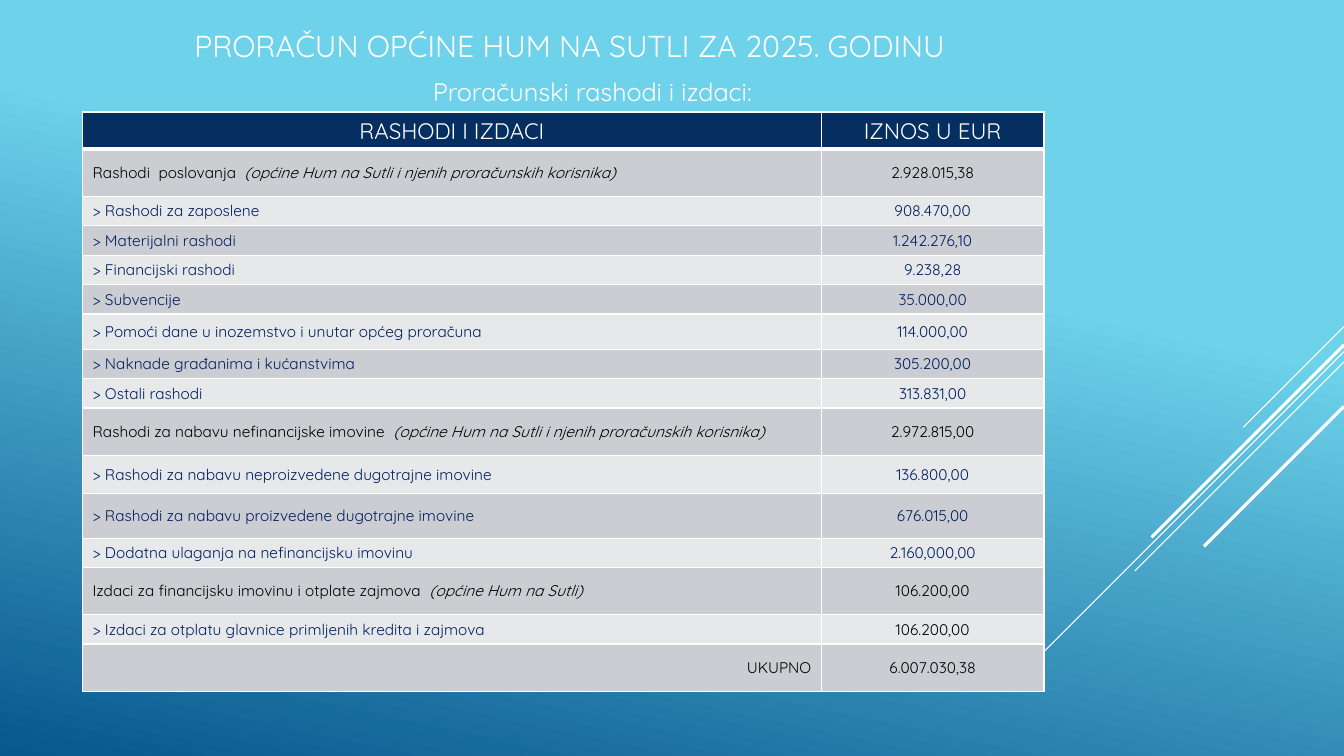
from dataclasses import dataclass

from lxml.etree import SubElement
from pptx import Presentation
from pptx.dml.color import RGBColor
from pptx.enum.shapes import MSO_CONNECTOR as Connector
from pptx.enum.text import MSO_ANCHOR as Anchor, PP_ALIGN as Align
from pptx.oxml.ns import qn
from pptx.util import Cm, Pt


@dataclass(frozen=True)
class Theme:
    font: str = "Quicksand"
    white: str = "FFFFFF"
    black: str = "000000"
    navy: str = "002060"
    header: str = "052F61"
    bands: tuple = ("CCCDD2", "E7E8EA")
    sky: tuple = ((0.35, "6ED2EB"), (1, "06588E"))
    title_size: float = 21.6
    subtitle_size: float = 18
    header_size: float = 16
    body_size: float = 11


@dataclass(frozen=True)
class Box:
    left: float
    top: float
    width: float
    height: float = 0

    def lengths(self):
        return [Cm(n) for n in (self.left, self.top, self.width, self.height)]


@dataclass(frozen=True)
class Entry:
    label: str
    amount: str
    color: str
    height: float
    note: str = ""
    amount_color: str = ""
    align: Align = Align.LEFT


THEME = Theme()
PAGE = Box(0, 0, 33.87, 19.05)


def group(label, amount, note="", align=Align.LEFT):
    return Entry(label, amount, THEME.black, 1.19, note, align=align)


def item(label, amount, height=0.74, amount_color=""):
    return Entry("> " + label, amount, THEME.navy, height, amount_color=amount_color)


USERS = "(općine Hum na Sutli i njenih proračunskih korisnika)"
ENTRIES = [
    group("Rashodi  poslovanja  ", "2.928.015,38", USERS),
    item("Rashodi za zaposlene", "908.470,00"),
    item("Materijalni rashodi", "1.242.276,10"),
    item("Financijski rashodi", "9.238,28"),
    item("Subvencije", "35.000,00"),
    item("Pomoći dane u inozemstvo i unutar općeg proračuna", "114.000,00", 0.89),
    item("Naknade građanima i kućanstvima", "305.200,00"),
    item("Ostali rashodi", "313.831,00"),
    group("Rashodi za nabavu nefinancijske imovine  ", "2.972.815,00", USERS),
    item("Rashodi za nabavu neproizvedene dugotrajne imovine", "136.800,00", 0.97),
    item("Rashodi za nabavu proizvedene dugotrajne imovine", "676.015,00", 1.12),
    item("Dodatna ulaganja na nefinancijsku imovinu", "2.160,000,00"),
    group("Izdaci za financijsku imovinu i otplate zajmova  ", "106.200,00",
          "(općine Hum na Sutli)"),
    item("Izdaci za otplatu glavnice primljenih kredita i zajmova", "106.200,00",
         amount_color=THEME.black),
    group("UKUPNO", "6.007.030,38", align=Align.RIGHT),
]


def rgb(color):
    return RGBColor.from_string(color)


def add_span(para, text, size, color, italic=False):
    span = para.add_run()
    span.text = text
    formats = {"name": THEME.font, "size": Pt(size), "bold": False, "italic": italic}
    for name, value in formats.items():
        setattr(span.font, name, value)
    span.font.color.rgb = rgb(color)


def paint_background(page):
    fill = page.background.fill
    fill.gradient()
    fill.gradient_angle = 258
    for stop, (position, color) in zip(fill.gradient_stops, THEME.sky):
        stop.position = position
        stop.color.rgb = rgb(color)


def add_diagonals(page, box):
    """Lines that run at 45 degrees down from the right edge of the box."""
    right = box.left + box.width
    for top, run, weight in ((8.23, 2.54, 0.75), (8.86, 8.28, 0.75), (9.12, 5.27, 0.75),
                             (8.69, 4.85, 2.25), (10.24, 3.53, 2.25)):
        start = box.top + top
        line = page.shapes.add_connector(
            Connector.STRAIGHT, Cm(right), Cm(start), Cm(right - run), Cm(start + run))
        line.line.color.rgb = rgb(THEME.white)
        line.line.width = Pt(weight)
        SubElement(line.element.spPr, qn("a:effectLst"))


def add_heading(page, box, text, size, align, anchor):
    frame = page.shapes.add_textbox(*box.lengths()).text_frame
    frame.word_wrap = True
    frame.vertical_anchor = anchor
    para = frame.paragraphs[0]
    para.alignment = align
    add_span(para, text, size, THEME.white)


def style_cell(cell, fill, align, anchor=Anchor.MIDDLE, top=1, bottom=1):
    """Fill and border the cell, and return its paragraph."""
    properties = cell._tc.get_or_add_tcPr()
    for side, weight in {"L": 1, "R": 1, "T": top, "B": bottom}.items():
        edge = SubElement(properties, qn(f"a:ln{side}"), w=str(Pt(weight)))
        SubElement(SubElement(edge, qn("a:solidFill")), qn("a:srgbClr"), val=THEME.white)
    cell.fill.solid()
    cell.fill.fore_color.rgb = rgb(fill)
    cell.vertical_anchor = anchor
    para = cell.text_frame.paragraphs[0]
    para.alignment = align
    return para


def add_budget_table(page, box):
    table = page.shapes.add_table(len(ENTRIES) + 1, 2, *box.lengths()).table
    table.first_row = table.horz_banding = False
    amount_width = 5.61
    for column, width in zip(table.columns, (box.width - amount_width, amount_width)):
        column.width = Cm(width)
    for row, height in zip(table.rows, [0.94] + [entry.height for entry in ENTRIES]):
        row.height = Cm(height)

    # Header
    for column, text in enumerate(("RASHODI I IZDACI", "IZNOS U EUR")):
        para = style_cell(table.cell(0, column), THEME.header, Align.CENTER,
                          Anchor.TOP, bottom=3)
        add_span(para, text, THEME.header_size, THEME.white)

    # Entries
    for number, entry in enumerate(ENTRIES, start=1):
        fill = THEME.bands[(number - 1) % 2]
        top = 3 if number == 1 else 1
        label = style_cell(table.cell(number, 0), fill, entry.align, top=top)
        add_span(label, entry.label, THEME.body_size, entry.color)
        if entry.note:
            add_span(label, entry.note, THEME.body_size, entry.color, italic=True)
        amount = style_cell(table.cell(number, 1), fill, Align.CENTER, top=top)
        add_span(amount, entry.amount, THEME.body_size, entry.amount_color or entry.color)


def main():
    deck = Presentation()
    deck.slide_width, deck.slide_height = Cm(PAGE.width), Cm(PAGE.height)
    page = deck.slides.add_slide(deck.slide_layouts[6])
    paint_background(page)
    add_diagonals(page, PAGE)
    add_heading(page, Box(2.57, 0.46, 23.57, 1.35),
                "PRORAČUN OPĆINE HUM NA SUTLI ZA 2025. GODINU",
                THEME.title_size, Align.CENTER, Anchor.MIDDLE)
    add_heading(page, Box(6.27, 1.22, 12.93, 1.6), "Proračunski rashodi i izdaci:",
                THEME.subtitle_size, Align.RIGHT, Anchor.BOTTOM)
    add_budget_table(page, Box(2.08, 2.82, 24.23, 14.5))
    deck.save("out.pptx")


if __name__ == "__main__":
    main()
